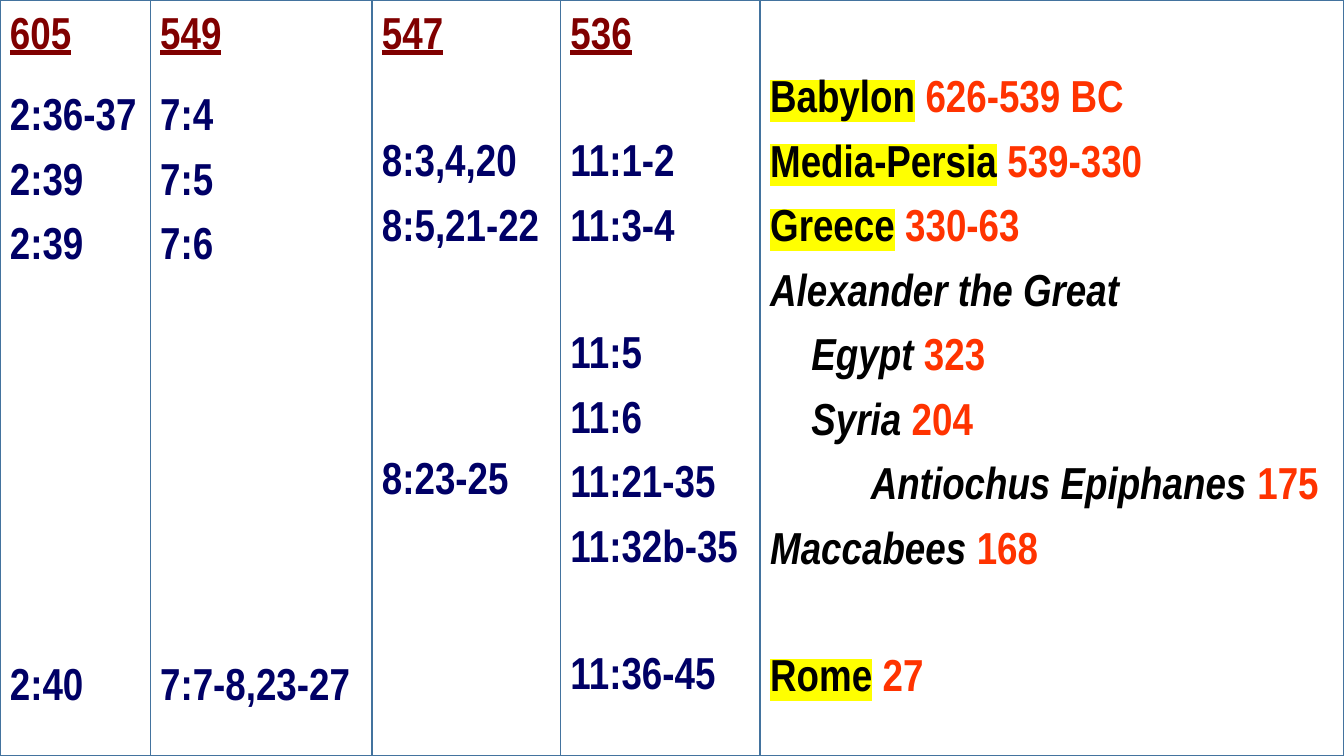
"""Build a slide that lines up the visions of Daniel with the kingdoms they describe."""
from lxml import etree
from pptx import Presentation
from pptx.dml.color import RGBColor
from pptx.enum.shapes import MSO_SHAPE as Shape
from pptx.enum.text import MSO_ANCHOR as Anchor, PP_ALIGN as Align
from pptx.oxml.ns import qn
from pptx.util import Inches, Pt

COLORS = {"border": "43739E", "year": "800000", "verse": "000066",
          "kingdom": "000000", "ruler": "000000", "date": "FF3300",
          "marker": "FFFF00"}
ROW_PITCH = 44.8
LINE_HEIGHT = 37.1
INSET = 0.05


def add_run(paragraph, text, style):
    run = paragraph.add_run()
    run.text = text
    run.font.color.rgb = RGBColor.from_string(COLORS[style])
    if style == "year":
        run.font.underline = True
    elif style == "ruler":
        run.font.italic = True
    elif style == "kingdom":
        highlight = etree.SubElement(run.font._element, qn("a:highlight"))
        etree.SubElement(highlight, qn("a:srgbClr"), val=COLORS["marker"])


def add_column(slide, left, right, entries):
    shape = slide.shapes.add_shape(
        Shape.RECTANGLE, Inches(left), 0, Inches(right - left), Inches(7.5))
    shape.shadow.inherit = False
    shape.fill.background()
    shape.line.color.rgb = RGBColor.from_string(COLORS["border"])
    shape.line.width = Pt(1)
    frame = shape.text_frame
    frame.word_wrap = True
    frame.vertical_anchor = Anchor.TOP
    frame.margin_left, frame.margin_right = Inches(0.1), 0
    frame.margin_top = Inches(INSET + entries[0][0] * ROW_PITCH / 72)
    previous_row = None
    for row, indent, parts in entries:
        if previous_row is None:
            paragraph = frame.paragraphs[0]
        else:
            paragraph = frame.add_paragraph()
            gap = (row - previous_row) * ROW_PITCH - LINE_HEIGHT
            paragraph.space_before = Pt(round(gap, 1))
        previous_row = row
        paragraph.alignment = Align.LEFT
        if indent:
            paragraph._p.get_or_add_pPr().set("marL", str(Inches(indent)))
        paragraph.font.name = "Arial Narrow"
        paragraph.font.size = Pt(32)
        paragraph.font.bold = True
        for text, style in parts:
            add_run(paragraph, text, style)


presentation = Presentation()
presentation.slide_width = Inches(13.33)
presentation.slide_height = Inches(7.5)
slide = presentation.slides.add_slide(presentation.slide_layouts[6])

edges = [0, 1.49, 3.69, 5.56, 7.54, 13.33]
visions = [
    ("605", {1.26: "2:36-37", 2.26: "2:39", 3.26: "2:39", 10.26: "2:40"}),
    ("549", {1.26: "7:4", 2.26: "7:5", 3.26: "7:6", 10.26: "7:7-8,23-27"}),
    ("547", {2: "8:3,4,20", 3: "8:5,21-22", 7: "8:23-25"}),
    ("536", {2: "11:1-2", 3: "11:3-4", 5: "11:5", 6: "11:6",
             7: "11:21-35", 8: "11:32b-35", 10: "11:36-45"}),
]
history = [
    (1, 0, "Babylon", "kingdom", "626-539 BC"),
    (2, 0, "Media-Persia", "kingdom", "539-330"),
    (3, 0, "Greece", "kingdom", "330-63"),
    (4, 0, "Alexander the Great", "ruler", ""),
    (5, 0.41, "Egypt", "ruler", "323"),
    (6, 0.41, "Syria", "ruler", "204"),
    (7, 1, "Antiochus Epiphanes", "ruler", "175"),
    (8, 0, "Maccabees", "ruler", "168"),
    (10, 0, "Rome", "kingdom", "27"),
]

columns = []
for year, verses in visions:
    columns.append([(0, 0, [(year, "year")])] + [
        (row, 0, [(verse, "verse")]) for row, verse in verses.items()])
columns.append([
    (row, indent, [(name, style)] + ([(" " + date, "date")] if date else []))
    for row, indent, name, style, date in history])

for left, right, entries in zip(edges, edges[1:], columns):
    add_column(slide, left, right, entries)

presentation.save("out.pptx")
